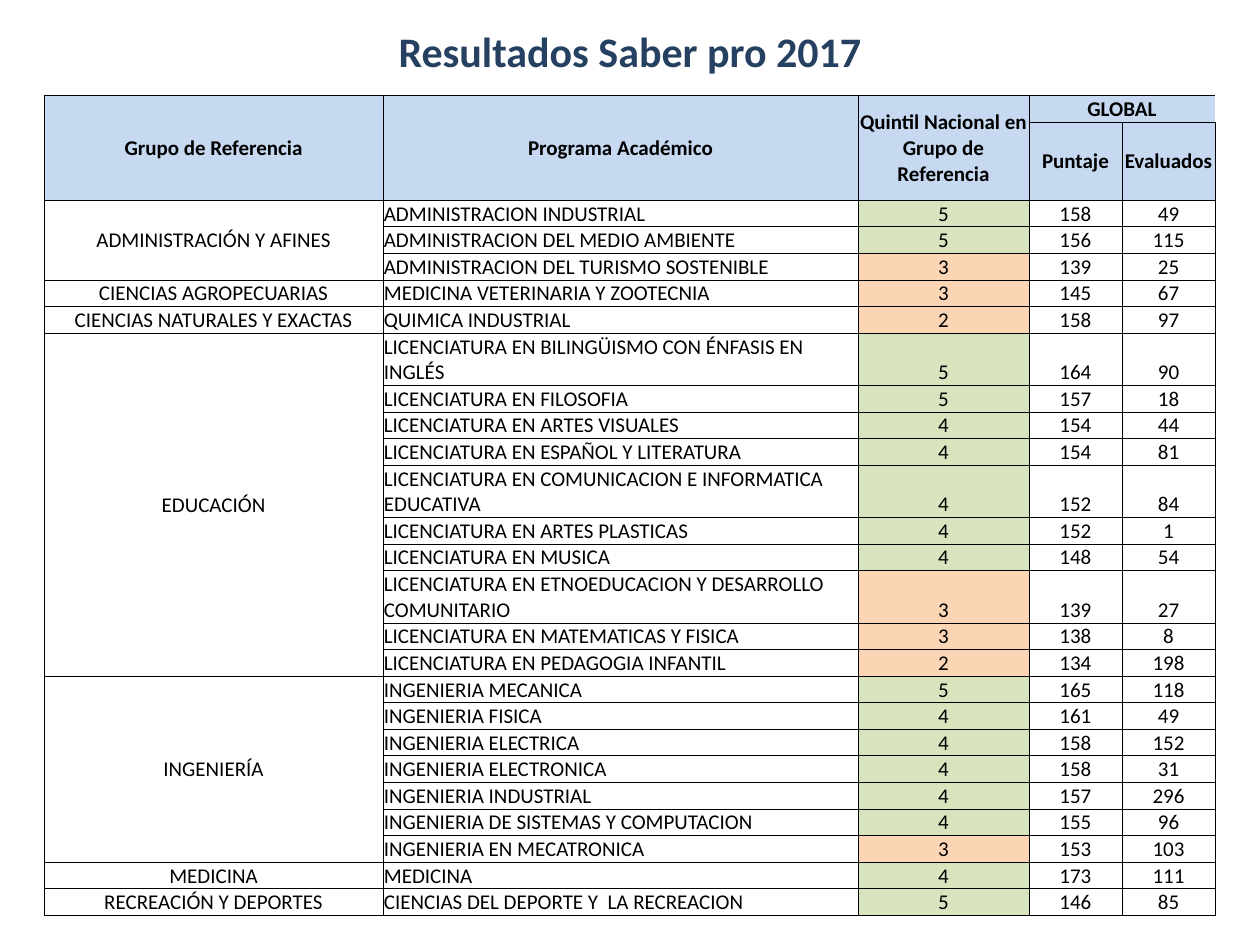
from lxml import etree
from pptx import Presentation
from pptx.dml.color import RGBColor
from pptx.enum.text import MSO_ANCHOR, PP_ALIGN
from pptx.oxml.ns import qn
from pptx.util import Pt

CENTER, LEFT = PP_ALIGN.CENTER, PP_ALIGN.LEFT
MIDDLE, BOTTOM = MSO_ANCHOR.MIDDLE, MSO_ANCHOR.BOTTOM

NAVY = RGBColor(0x25, 0x40, 0x61)
BLACK = RGBColor(0x00, 0x00, 0x00)
WHITE = RGBColor(0xFF, 0xFF, 0xFF)
HEADER_BLUE = RGBColor(0xC6, 0xD9, 0xF1)
HIGH_GREEN = RGBColor(0xD7, 0xE4, 0xBD)
LOW_ORANGE = RGBColor(0xFC, 0xD5, 0xB5)
FONT = "Calibri"

TITLE = "Resultados Saber pro 2017"
HEADERS = [
    ["Grupo de Referencia", "Programa Académico",
     "Quintil Nacional en Grupo de Referencia", "GLOBAL", ""],
    ["", "", "", "Puntaje", "Evaluados"],
]
GROUPS = [
    ("ADMINISTRACIÓN Y AFINES", [
        ("ADMINISTRACION INDUSTRIAL", 5, 158, 49),
        ("ADMINISTRACION DEL MEDIO AMBIENTE", 5, 156, 115),
        ("ADMINISTRACION DEL TURISMO SOSTENIBLE", 3, 139, 25),
    ]),
    ("CIENCIAS AGROPECUARIAS", [
        ("MEDICINA VETERINARIA Y ZOOTECNIA", 3, 145, 67),
    ]),
    ("CIENCIAS NATURALES Y EXACTAS", [
        ("QUIMICA INDUSTRIAL", 2, 158, 97),
    ]),
    ("EDUCACIÓN", [
        ("LICENCIATURA EN BILINGÜISMO CON ÉNFASIS EN INGLÉS", 5, 164, 90),
        ("LICENCIATURA EN FILOSOFIA", 5, 157, 18),
        ("LICENCIATURA EN ARTES VISUALES", 4, 154, 44),
        ("LICENCIATURA EN ESPAÑOL Y LITERATURA", 4, 154, 81),
        ("LICENCIATURA EN COMUNICACION E INFORMATICA EDUCATIVA", 4, 152, 84),
        ("LICENCIATURA EN ARTES PLASTICAS", 4, 152, 1),
        ("LICENCIATURA EN MUSICA", 4, 148, 54),
        ("LICENCIATURA EN ETNOEDUCACION Y DESARROLLO COMUNITARIO", 3, 139, 27),
        ("LICENCIATURA EN MATEMATICAS Y FISICA", 3, 138, 8),
        ("LICENCIATURA EN PEDAGOGIA INFANTIL", 2, 134, 198),
    ]),
    ("INGENIERÍA", [
        ("INGENIERIA MECANICA", 5, 165, 118),
        ("INGENIERIA FISICA", 4, 161, 49),
        ("INGENIERIA ELECTRICA", 4, 158, 152),
        ("INGENIERIA ELECTRONICA", 4, 158, 31),
        ("INGENIERIA INDUSTRIAL", 4, 157, 296),
        ("INGENIERIA DE SISTEMAS Y COMPUTACION", 4, 155, 96),
        ("INGENIERIA EN MECATRONICA", 3, 153, 103),
    ]),
    ("MEDICINA", [
        ("MEDICINA", 4, 173, 111),
    ]),
    ("RECREACIÓN Y DEPORTES", [
        ("CIENCIAS DEL DEPORTE Y  LA RECREACION", 5, 146, 85),
    ]),
]

TABLE_LEFT, TABLE_TOP = 25.2, 54.6
COLUMN_WIDTHS = [193.7, 271.4, 97.7, 53.2, 53.2]
LINE_HEIGHT, TWO_LINE_HEIGHT, SUBHEADER_HEIGHT = 15.2, 29.9, 44.6
CHARS_PER_LINE = 45
HIGH_QUINTILE = 4


def write(frame, text, size, color, bold, align):
    frame.text = text
    paragraph = frame.paragraphs[0]
    paragraph.alignment = align
    font = paragraph.font
    font.name, font.size, font.bold = FONT, Pt(size), bold
    font.color.rgb = color


def add_borders(cell, open_right):
    properties = cell._tc.get_or_add_tcPr()
    for side in ("lnL", "lnR", "lnT", "lnB"):
        line = etree.SubElement(properties, qn(f"a:{side}"), w=str(Pt(0.5)))
        if side == "lnR" and open_right:
            etree.SubElement(line, qn("a:noFill"))
        else:
            fill = etree.SubElement(line, qn("a:solidFill"))
            etree.SubElement(fill, qn("a:srgbClr"), val=str(BLACK))


def style_cell(cell, text, fill, bold=False, align=CENTER, anchor=MIDDLE,
               open_right=False):
    cell.margin_left = cell.margin_right = cell.margin_top = Pt(0.5)
    cell.margin_bottom = 0
    cell.vertical_anchor = anchor
    add_borders(cell, open_right)
    cell.fill.solid()
    cell.fill.fore_color.rgb = fill
    write(cell.text_frame, text, 12, BLACK, bold, align)


def row_height(program):
    return TWO_LINE_HEIGHT if len(program) > CHARS_PER_LINE else LINE_HEIGHT


def main():
    deck = Presentation()
    deck.slide_width, deck.slide_height = Pt(720), Pt(540)
    slide = deck.slides.add_slide(deck.slide_layouts[6])

    title = slide.shapes.add_textbox(Pt(36.7), Pt(9.4), Pt(646.6), Pt(39.6))
    title.text_frame.word_wrap = True
    title.text_frame.vertical_anchor = MIDDLE
    write(title.text_frame, TITLE, 24, NAVY, True, CENTER)

    heights = [LINE_HEIGHT, SUBHEADER_HEIGHT]
    heights += [row_height(program[0]) for _, programs in GROUPS for program in programs]
    table = slide.shapes.add_table(
        len(heights), len(COLUMN_WIDTHS), Pt(TABLE_LEFT), Pt(TABLE_TOP),
        Pt(sum(COLUMN_WIDTHS)), Pt(sum(heights))).table
    table.first_row = table.horz_banding = False
    for column, width in zip(table.columns, COLUMN_WIDTHS):
        column.width = Pt(width)
    for row, height in zip(table.rows, heights):
        row.height = Pt(height)

    for r, labels in enumerate(HEADERS):
        for c, label in enumerate(labels):
            style_cell(table.cell(r, c), label, HEADER_BLUE, bold=True,
                       open_right=r == 0 and c >= 3)
    for c in range(3):
        table.cell(0, c).merge(table.cell(1, c))
    table.cell(0, 3).merge(table.cell(0, 4))

    r = len(HEADERS)
    for group, programs in GROUPS:
        first = r
        for program, quintile, score, evaluated in programs:
            quintile_fill = HIGH_GREEN if quintile >= HIGH_QUINTILE else LOW_ORANGE
            style_cell(table.cell(r, 0), group if r == first else "", WHITE)
            style_cell(table.cell(r, 1), program, WHITE, align=LEFT, anchor=BOTTOM)
            for c, (value, fill) in enumerate(
                    [(quintile, quintile_fill), (score, WHITE), (evaluated, WHITE)], 2):
                style_cell(table.cell(r, c), str(value), fill, anchor=BOTTOM)
            r += 1
        if len(programs) > 1:
            table.cell(first, 0).merge(table.cell(r - 1, 0))

    deck.save("out.pptx")


if __name__ == "__main__":
    main()
